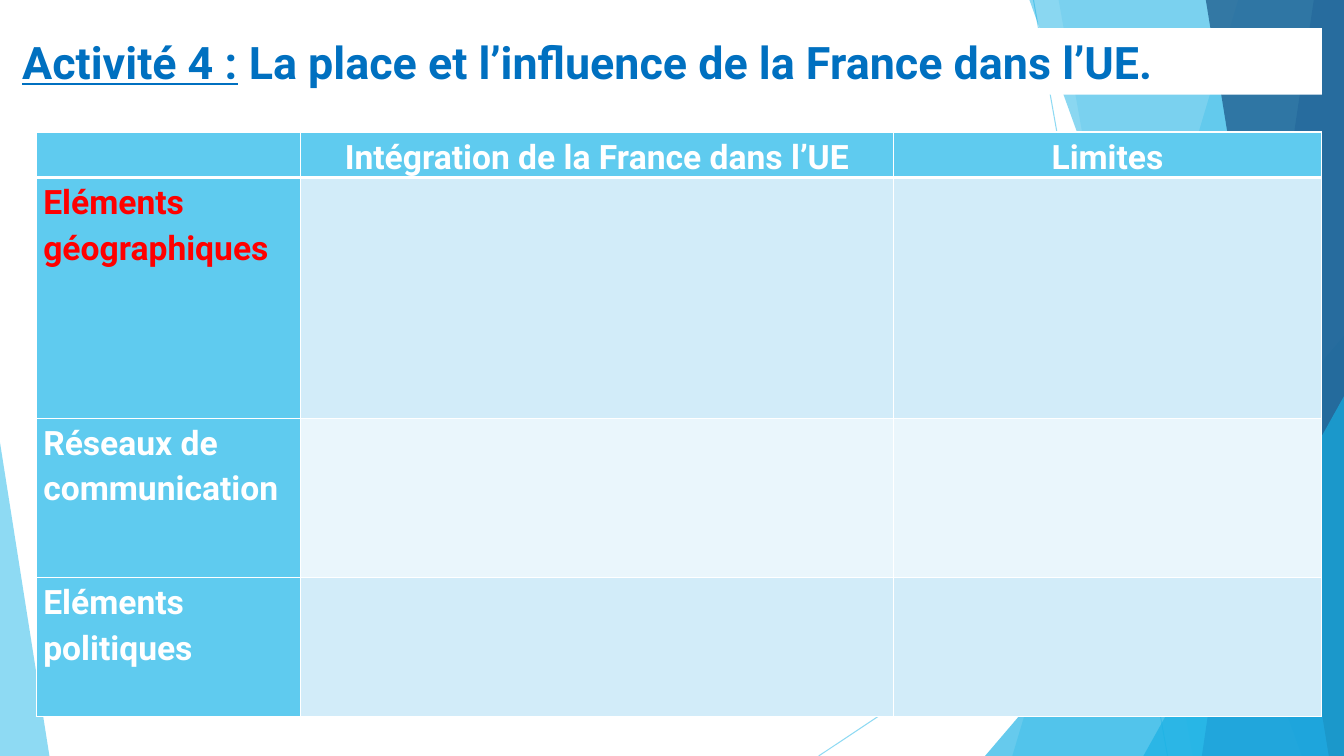
"""Build the slide on France's place and influence in the EU."""
from lxml import etree
from pptx import Presentation
from pptx.dml.color import RGBColor
from pptx.enum.shapes import MSO_CONNECTOR, MSO_SHAPE
from pptx.enum.text import MSO_ANCHOR, MSO_AUTO_SIZE, PP_ALIGN
from pptx.oxml.ns import qn
from pptx.util import Inches, Pt

WIDTH, HEIGHT = 13.33, 7.5
FONT = "Roboto"
SKY, AZURE, WHITE, RED, BLUE = "5FCBEF", "17B0E4", "FFFFFF", "FF0000", "0070C0"
BAND_ROWS = ["D2ECF9", "EAF6FC"]

TITLE = ["Activité 4 :", " La place et l’influence de la France dans l’UE."]
TITLE_BOX = (0.12, 0.28, 12.99, 0.66)

ROWS = [
    ["", "Intégration de la France dans l’UE", "Limites"],
    ["Eléments géographiques", "", ""],
    ["Réseaux de communication", "", ""],
    ["Eléments politiques", "", ""],
]
TABLE_CORNER = (0.36, 1.31)
COLUMN_WIDTHS = [2.62, 5.88, 4.25]
ROW_HEIGHTS = [0.39, 2.39, 1.58, 1.38]

RAYS = [(10.25, 0, 11.58, HEIGHT), (WIDTH, 4.03, 8.12, HEIGHT)]
FACETS = [
    ("band", (12.28, 10.04), SKY, 36),
    ("band", (10.5, 11.83), SKY, 20),
    ("triangle", (9.77, 3.33, 3.56, 1), AZURE, 66),
    ("band", (10.21, 12.91), AZURE, 50),
    ("band", (13.03, 11.92), "2E83C3", 70),
    ("band", (11.96, 13.18), "226292", 80),
    ("triangle", (11.34, 3.93, 1.99, 1), AZURE, 66),
    ("triangle", (0, 4.39, 0.49, 0), SKY, 70),
]


def color(code):
    return RGBColor.from_string(code)


def inches(values):
    return [Inches(value) for value in values]


def set_alpha(fill_parent, percent):
    tint = fill_parent.find(".//" + qn("a:srgbClr"))
    etree.SubElement(tint, qn("a:alpha"), val=str(percent * 1000))


def style_span(span, size, code):
    span.font.name = FONT
    span.font.size = Pt(size)
    span.font.bold = True
    span.font.color.rgb = color(code)


def add_ray(page, ends):
    ray = page.shapes.add_connector(MSO_CONNECTOR.STRAIGHT, *inches(ends))
    ray.line.color.rgb = color(SKY)
    ray.line.width = Pt(0.75)
    properties = ray.element.spPr
    set_alpha(properties, 70)
    etree.SubElement(properties, qn("a:effectLst"))


def add_facet(page, kind, place, code, alpha):
    if kind == "band":
        top, bottom = place
        corners = [(WIDTH, 0), (WIDTH, HEIGHT), (bottom, HEIGHT)]
        builder = page.shapes.build_freeform(Inches(top), 0)
        builder.add_line_segments([inches(corner) for corner in corners])
        facet = builder.convert_to_shape()
    else:
        left, top, width, apex = place
        facet = page.shapes.add_shape(
            MSO_SHAPE.ISOSCELES_TRIANGLE, *inches((left, top, width, HEIGHT - top)))
        facet.adjustments[0] = apex
    facet.shadow.inherit = False
    facet.fill.solid()
    facet.fill.fore_color.rgb = color(code)
    set_alpha(facet.element.spPr, alpha)
    facet.line.fill.background()


def add_borders(cell, row):
    points = {"a:lnL": 1, "a:lnR": 1, "a:lnT": 3 if row == 1 else 1,
              "a:lnB": 3 if row == 0 else 1}
    properties = cell._tc.get_or_add_tcPr()
    for tag, width in points.items():
        border = etree.SubElement(properties, qn(tag), w=str(Pt(width)))
        fill = etree.SubElement(border, qn("a:solidFill"))
        etree.SubElement(fill, qn("a:srgbClr"), val=WHITE)


def fill_cell(cell, row, column, text):
    header = row == 0 or column == 0
    add_borders(cell, row)
    cell.fill.solid()
    cell.fill.fore_color.rgb = color(SKY if header else BAND_ROWS[(row - 1) % 2])
    cell.margin_left = cell.margin_right = Inches(0.07)
    cell.margin_top = cell.margin_bottom = 0
    cell.text_frame.text = text
    para = cell.text_frame.paragraphs[0]
    para.line_spacing = 1.15
    para.alignment = PP_ALIGN.CENTER if row == 0 else PP_ALIGN.LEFT
    for span in para.runs:
        style_span(span, 24, RED if row == 1 else WHITE)


def add_grid(page):
    size = (sum(COLUMN_WIDTHS), sum(ROW_HEIGHTS))
    grid = page.shapes.add_table(
        len(ROWS), len(COLUMN_WIDTHS), *inches(TABLE_CORNER + size)).table
    for column, width in zip(grid.columns, COLUMN_WIDTHS):
        column.width = Inches(width)
    for row, height in zip(grid.rows, ROW_HEIGHTS):
        row.height = Inches(height)
    for row, texts in enumerate(ROWS):
        for column, text in enumerate(texts):
            fill_cell(grid.cell(row, column), row, column, text)


def set_title(page):
    title = page.shapes.title
    title.left, title.top, title.width, title.height = inches(TITLE_BOX)
    title.fill.solid()
    title.fill.fore_color.rgb = color(WHITE)
    frame = title.text_frame
    frame.word_wrap = True
    frame.auto_size = MSO_AUTO_SIZE.NONE
    frame.vertical_anchor = MSO_ANCHOR.MIDDLE
    para = frame.paragraphs[0]
    para.alignment = PP_ALIGN.LEFT
    for index, text in enumerate(TITLE):
        span = para.add_run()
        span.text = text
        style_span(span, 32, BLUE)
        span.font.underline = index == 0
    title.element.getparent().append(title.element)


def main():
    deck = Presentation()
    deck.slide_width, deck.slide_height = inches((WIDTH, HEIGHT))
    page = deck.slides.add_slide(deck.slide_layouts[5])
    for ends in RAYS:
        add_ray(page, ends)
    for facet in FACETS:
        add_facet(page, *facet)
    add_grid(page)
    set_title(page)
    deck.save("out.pptx")


if __name__ == "__main__":
    main()
